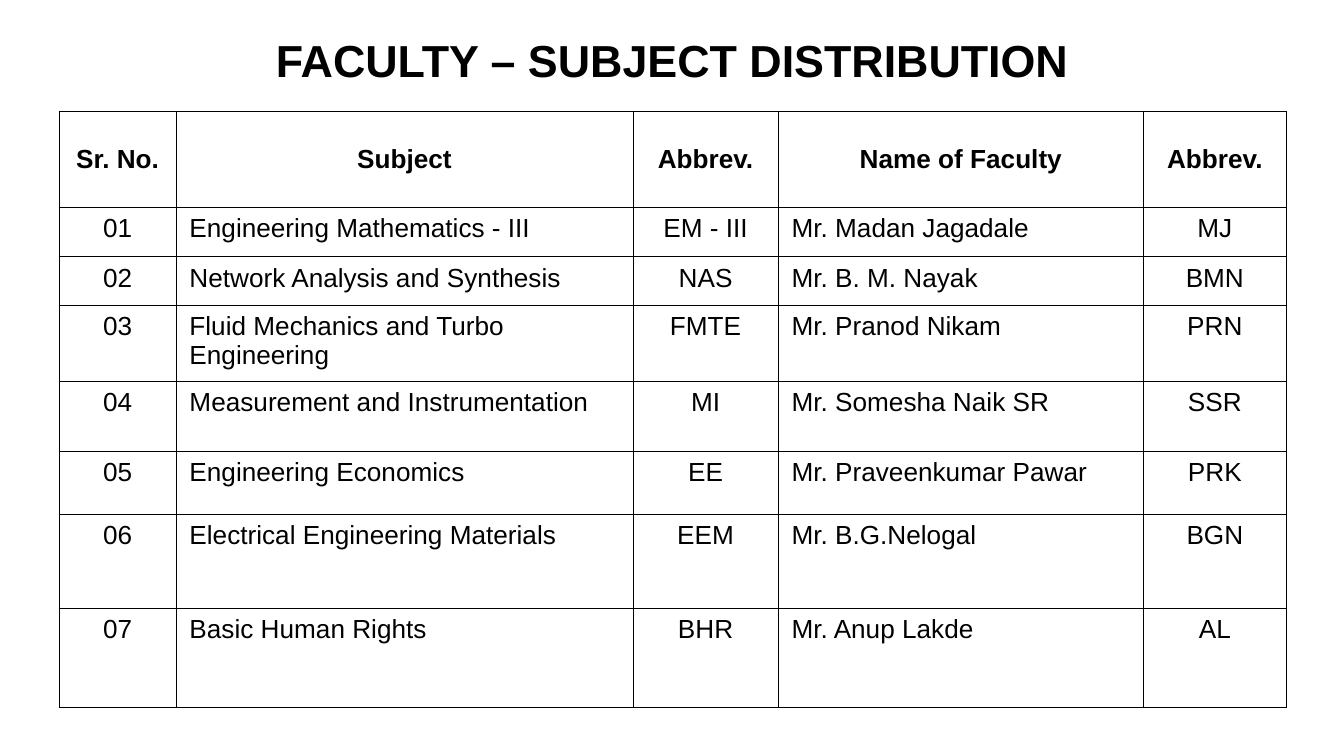
from dataclasses import dataclass

from lxml import etree
from pptx import Presentation
from pptx.dml.color import RGBColor
from pptx.enum.text import MSO_ANCHOR, PP_ALIGN
from pptx.oxml.ns import qn
from pptx.util import Inches, Pt

LEFT, CENTER = PP_ALIGN.LEFT, PP_ALIGN.CENTER
TOP, MIDDLE = MSO_ANCHOR.TOP, MSO_ANCHOR.MIDDLE


@dataclass(frozen=True)
class Theme:
    font: str = "Arial"
    ink: str = "000000"
    paper: str = "FFFFFF"
    title_size: int = 24
    table_size: int = 14
    border: float = 0.5


THEME = Theme()

HEADINGS = ("Sr. No.", "Subject", "Abbrev.", "Name of Faculty", "Abbrev.")
SUBJECTS = (
    ("Engineering Mathematics - III", "EM - III", "Mr. Madan Jagadale", "MJ"),
    ("Network Analysis and Synthesis", "NAS", "Mr. B. M. Nayak", "BMN"),
    ("Fluid Mechanics and Turbo Engineering", "FMTE", "Mr. Pranod Nikam", "PRN"),
    ("Measurement and Instrumentation", "MI", "Mr. Somesha Naik SR", "SSR"),
    ("Engineering Economics", "EE", "Mr. Praveenkumar Pawar", "PRK"),
    ("Electrical Engineering Materials", "EEM", "Mr. B.G.Nelogal", "BGN"),
    ("Basic Human Rights", "BHR", "Mr. Anup Lakde", "AL"),
)
COLUMN_WIDTHS = (0.87, 3.4, 1.08, 2.72, 1.06)
COLUMN_ALIGNS = (CENTER, LEFT, CENTER, LEFT, CENTER)
ROW_HEIGHTS = (0.71, 0.37, 0.36, 0.42, 0.52, 0.47, 0.7, 0.74)


def write(frame, text, *, size, bold=False, align=LEFT):
    paragraph = frame.paragraphs[0]
    paragraph.alignment = align
    run = paragraph.add_run()
    run.text = text
    run.font.name = THEME.font
    run.font.size = Pt(size)
    run.font.bold = bold
    run.font.color.rgb = RGBColor.from_string(THEME.ink)


def outline_cell(cell):
    properties = cell._tc.get_or_add_tcPr()
    # Borders must come before the fill in the cell properties
    for index, side in enumerate(("a:lnL", "a:lnR", "a:lnT", "a:lnB")):
        line = etree.Element(qn(side), w=str(Pt(THEME.border)))
        fill = etree.SubElement(line, qn("a:solidFill"))
        etree.SubElement(fill, qn("a:srgbClr"), val=THEME.ink)
        properties.insert(index, line)


def add_title(slide, left, top, width, height):
    box = slide.shapes.add_textbox(*map(Inches, (left, top, width, height)))
    frame = box.text_frame
    frame.word_wrap = True
    frame.vertical_anchor = TOP
    frame.margin_left = frame.margin_right = Inches(0.1)
    frame.margin_top = frame.margin_bottom = Inches(0.1)
    write(frame, "FACULTY – SUBJECT DISTRIBUTION",
          size=THEME.title_size, bold=True, align=CENTER)


def add_faculty_table(slide, left, top, width, height):
    entries = [HEADINGS] + [
        (f"{number:02d}", *subject) for number, subject in enumerate(SUBJECTS, 1)
    ]
    table = slide.shapes.add_table(
        len(entries), len(HEADINGS), *map(Inches, (left, top, width, height))
    ).table
    table.first_row = table.horz_banding = False
    for column, column_width in zip(table.columns, COLUMN_WIDTHS):
        column.width = Inches(column_width)
    for row, row_height in zip(table.rows, ROW_HEIGHTS):
        row.height = Inches(row_height)

    for row_index, entry in enumerate(entries):
        heading = row_index == 0
        for column_index, text in enumerate(entry):
            cell = table.cell(row_index, column_index)
            cell.fill.solid()
            cell.fill.fore_color.rgb = RGBColor.from_string(THEME.paper)
            cell.vertical_anchor = MIDDLE if heading else TOP
            outline_cell(cell)
            write(cell.text_frame, text, size=THEME.table_size, bold=heading,
                  align=CENTER if heading else COLUMN_ALIGNS[column_index])


def main():
    presentation = Presentation()
    # Widescreen, 16:9
    presentation.slide_width = Inches(10)
    presentation.slide_height = Inches(10 * 9 / 16)
    slide = presentation.slides.add_slide(presentation.slide_layouts[6])

    # Heading
    add_title(slide, 0, 0.14, 10, 0.73)
    # Subjects and who teaches them
    add_faculty_table(slide, 0.44, 0.83, 9.12, 4.45)

    presentation.save("out.pptx")


if __name__ == "__main__":
    main()
